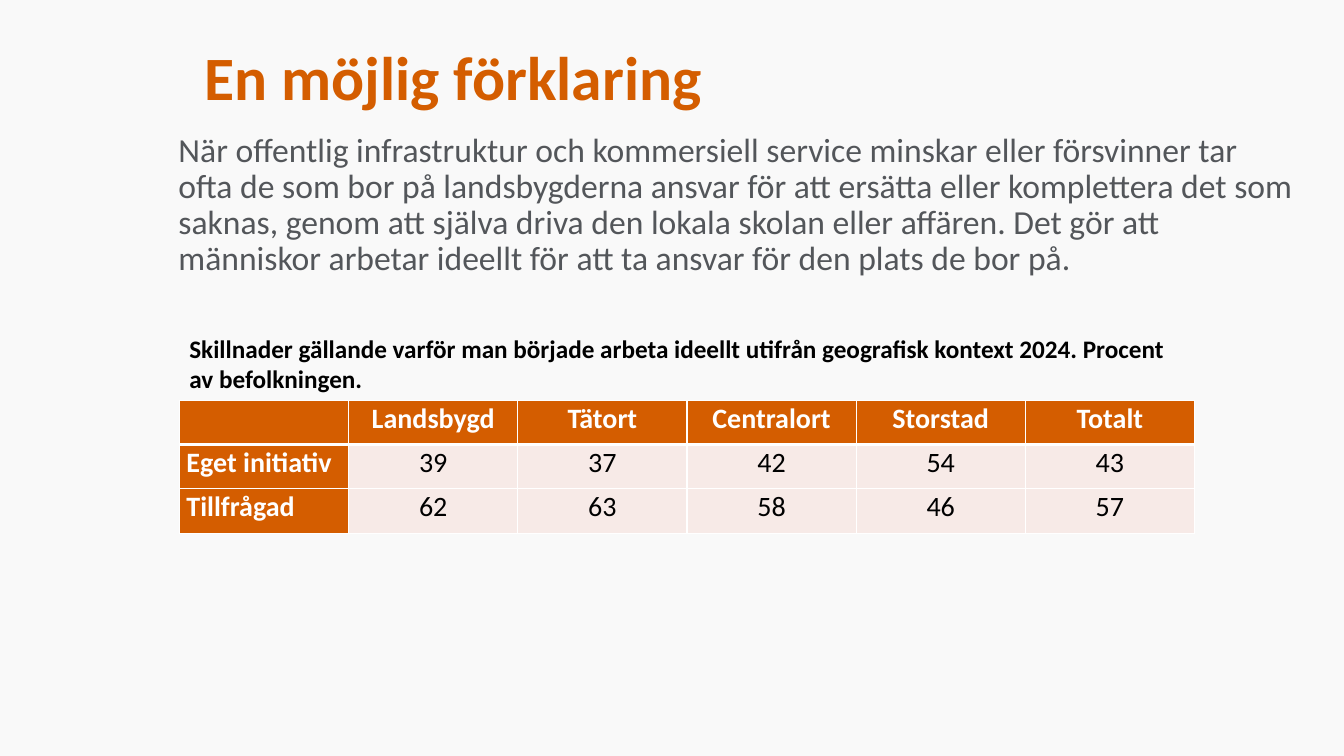
from dataclasses import dataclass

from lxml import etree
from pptx import Presentation
from pptx.dml.color import RGBColor
from pptx.enum.text import MSO_ANCHOR, MSO_AUTO_SIZE, PP_ALIGN
from pptx.oxml.ns import qn
from pptx.util import Inches, Pt

LEFT, CENTER = PP_ALIGN.LEFT, PP_ALIGN.CENTER
TOP, BOTTOM = MSO_ANCHOR.TOP, MSO_ANCHOR.BOTTOM
NO_AUTOFIT = MSO_AUTO_SIZE.NONE
TITLE_AND_CONTENT = 1


@dataclass(frozen=True)
class Theme:
    font: str = "Calibri"
    background: str = "F9F9F9"
    accent: str = "D45D00"
    body: str = "53565A"
    black: str = "000000"
    white: str = "FFFFFF"
    pale: str = "F7EAE7"
    title_size: int = 44
    body_size: int = 24
    table_size: int = 20
    caption_size: int = 18
    thin_border: int = 1
    thick_border: int = 3


THEME = Theme()

TITLE = "En möjlig förklaring"
EXPLANATION = (
    "När offentlig infrastruktur och kommersiell service minskar eller försvinner tar "
    "ofta de som bor på landsbygderna ansvar för att ersätta eller komplettera det som "
    "saknas, genom att själva driva den lokala skolan eller affären. Det gör att "
    "människor arbetar ideellt för att ta ansvar för den plats de bor på."
)
CAPTION = (
    "Skillnader gällande varför man började arbeta ideellt utifrån geografisk "
    "kontext 2024. Procent av befolkningen."
)
TABLE_ROWS = [
    ["", "Landsbygd", "Tätort", "Centralort", "Storstad", "Totalt"],
    ["Eget initiativ", "39", "37", "42", "54", "43"],
    ["Tillfrågad", "62", "63", "58", "46", "57"],
]


def write_text(frame, text, size, color, bold=False, align=LEFT, line_spacing=1.0):
    """Write one formatted run into the first paragraph of a text frame."""
    paragraph = frame.paragraphs[0]
    paragraph.alignment = align
    paragraph.line_spacing = line_spacing
    paragraph.space_before = Pt(0)
    run = paragraph.add_run()
    run.text = text
    run.font.name = THEME.font
    run.font.size = Pt(size)
    run.font.bold = bold
    run.font.color.rgb = RGBColor.from_string(color)


def place(shape, left, top, width, height, anchor):
    shape.left, shape.top = Inches(left), Inches(top)
    shape.width, shape.height = Inches(width), Inches(height)
    frame = shape.text_frame
    frame.word_wrap = True
    frame.auto_size = NO_AUTOFIT
    frame.vertical_anchor = anchor
    return frame


def remove_bullet(paragraph):
    properties = paragraph._p.get_or_add_pPr()
    properties.set("marL", "0")
    properties.set("indent", "0")
    etree.SubElement(properties, qn("a:buNone"))


def set_borders(cell, top, bottom):
    """Draw white borders; the side borders are always thin."""
    properties = cell._tc.get_or_add_tcPr()
    widths = {"lnL": THEME.thin_border, "lnR": THEME.thin_border, "lnT": top, "lnB": bottom}
    for tag, width in widths.items():
        line = etree.SubElement(properties, qn(f"a:{tag}"), w=str(Pt(width)))
        fill = etree.SubElement(line, qn("a:solidFill"))
        etree.SubElement(fill, qn("a:srgbClr"), val=THEME.white)


def format_cell(cell, text, row, column):
    is_heading = row == 0 or column == 0
    set_borders(
        cell,
        top=THEME.thick_border if row == 1 else THEME.thin_border,
        bottom=THEME.thick_border if row == 0 else THEME.thin_border,
    )
    cell.fill.solid()
    cell.fill.fore_color.rgb = RGBColor.from_string(THEME.accent if is_heading else THEME.pale)
    if text:
        cell.margin_left = cell.margin_right = Inches(0.07)
        cell.margin_top = cell.margin_bottom = Inches(0)
        write_text(
            cell.text_frame,
            text,
            THEME.table_size,
            THEME.white if is_heading else THEME.black,
            bold=is_heading,
            align=LEFT if column == 0 else CENTER,
            line_spacing=1.04,
        )


def add_reason_table(slide, left, top, width, row_height):
    row_count, column_count = len(TABLE_ROWS), len(TABLE_ROWS[0])
    table = slide.shapes.add_table(
        row_count, column_count,
        Inches(left), Inches(top), Inches(width), Inches(row_height * row_count),
    ).table
    for row, texts in enumerate(TABLE_ROWS):
        for column, text in enumerate(texts):
            format_cell(table.cell(row, column), text, row, column)


def main():
    presentation = Presentation()
    presentation.slide_width = Inches(13.33)
    presentation.slide_height = Inches(7.5)
    slide = presentation.slides.add_slide(presentation.slide_layouts[TITLE_AND_CONTENT])

    # Background
    background = slide.background.fill
    background.solid()
    background.fore_color.rgb = RGBColor.from_string(THEME.background)

    # Title
    title_frame = place(slide.shapes.title, 1.93, 0.27, 8.91, 0.91, BOTTOM)
    write_text(title_frame, TITLE, THEME.title_size, THEME.accent, bold=True, line_spacing=0.9)

    # Explanation
    body_frame = place(slide.placeholders[1], 1.67, 1.27, 11.3, 1.77, TOP)
    remove_bullet(body_frame.paragraphs[0])
    write_text(body_frame, EXPLANATION, THEME.body_size, THEME.body, line_spacing=0.9)

    # Table and its caption
    add_reason_table(slide, 1.78, 3.97, 10.07, 0.44)
    caption = slide.shapes.add_textbox(0, 0, 0, 0)
    caption_frame = place(caption, 1.78, 3.26, 10.07, 0.71, TOP)
    write_text(caption_frame, CAPTION, THEME.caption_size, THEME.black, bold=True)

    presentation.save("out.pptx")


if __name__ == "__main__":
    main()
